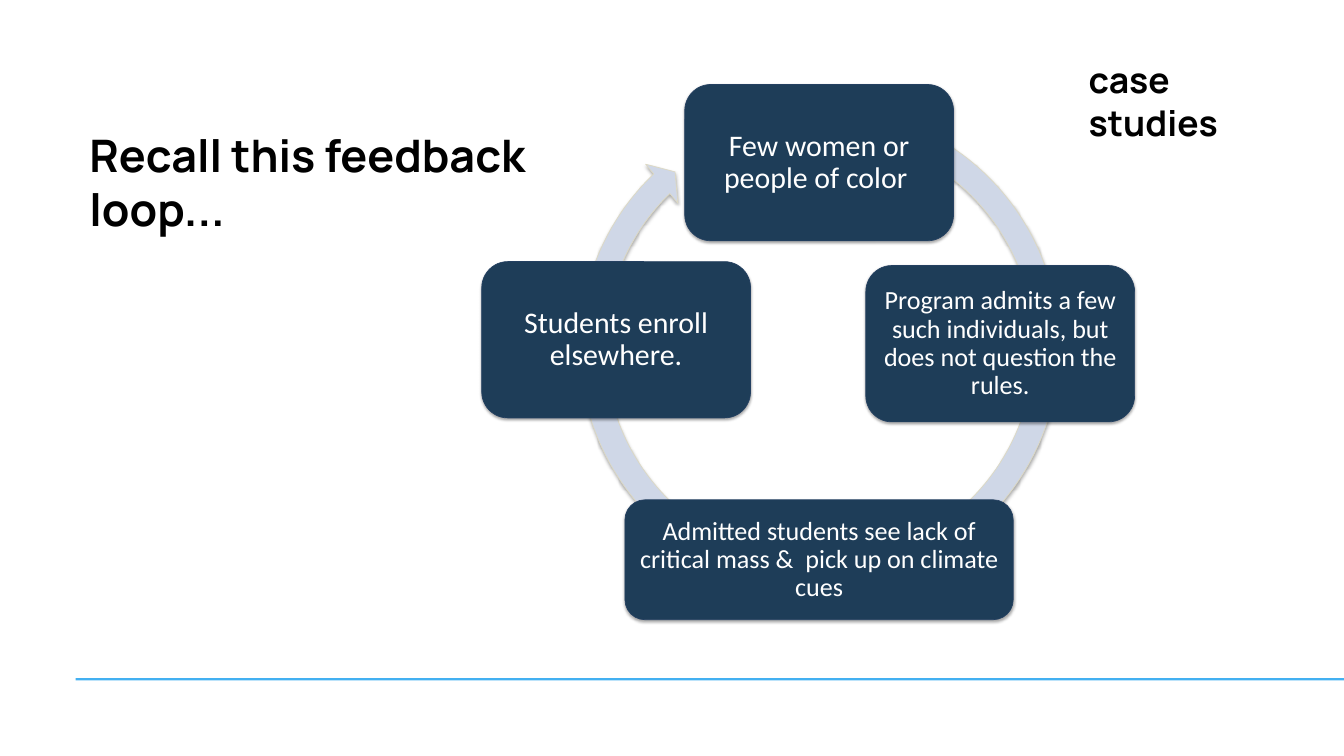
"""Build the feedback loop slide with four boxes on a circular arrow."""
from lxml import etree
from pptx import Presentation
from pptx.dml.color import RGBColor
from pptx.enum.shapes import MSO_SHAPE
from pptx.enum.text import MSO_ANCHOR, MSO_AUTO_SIZE, PP_ALIGN
from pptx.util import Pt

RECT, ROUND = MSO_SHAPE.RECTANGLE, MSO_SHAPE.ROUNDED_RECTANGLE
RING = MSO_SHAPE.CIRCULAR_ARROW
TOP, MIDDLE = MSO_ANCHOR.TOP, MSO_ANCHOR.MIDDLE
LEFT, CENTER = PP_ALIGN.LEFT, PP_ALIGN.CENTER
NO_FIT = MSO_AUTO_SIZE.NONE
DEGREE = 0.6
SHADOW = (
    '<a:outerShdw xmlns:a="http://schemas.openxmlformats.org/drawingml/2006/main" '
    'blurRad="39370" dist="22860" dir="5400000" rotWithShape="0">'
    '<a:srgbClr val="000000"><a:alpha val="35000"/></a:srgbClr></a:outerShdw>'
)


def paint(sp, fill, line):
    """Give a shape its fill, outline and soft shadow."""
    sp.fill.solid()
    sp.fill.fore_color.rgb = RGBColor.from_string(fill)
    sp.line.color.rgb = RGBColor.from_string(line)
    sp.line.width = Pt(0.75)
    sp.shadow.inherit = False
    effects = sp._element.spPr.find("{*}effectLst")
    effects.append(etree.fromstring(SHADOW))


def write(sp, text, size, font, color, bold, align, anchor, inset):
    """Set the text of a shape in one style."""
    tf = sp.text_frame
    frame = dict(word_wrap=True, auto_size=NO_FIT, vertical_anchor=anchor,
                 margin_left=Pt(inset[0]), margin_right=Pt(inset[0]),
                 margin_top=Pt(inset[1]), margin_bottom=Pt(inset[1]))
    for name, value in frame.items():
        setattr(tf, name, value)
    p = tf.paragraphs[0]
    p.alignment = align
    r = p.add_run()
    r.text = text
    for name, value in dict(size=Pt(size), name=font, bold=bold).items():
        setattr(r.font, name, value)
    r.font.color.rgb = RGBColor.from_string(color)
    return p


prs = Presentation()
prs.slide_width, prs.slide_height = Pt(1440), Pt(810)
s = prs.slides.add_slide(prs.slide_layouts[5])

title = s.shapes.title
place = dict(left=95.76, top=136.8, width=529.2, height=116.64)
for name, value in place.items():
    setattr(title, name, Pt(value))
write(title, "Recall this feedback loop...", 48, "Manrope", "000000", True,
      LEFT, TOP, (0, 0))

rule = s.shapes.add_shape(RECT, Pt(80.9), Pt(726.5), Pt(1406), Pt(2.6))
rule.fill.solid()
rule.fill.fore_color.rgb = RGBColor.from_string("43B0F1")
rule.line.fill.background()
rule.shadow.inherit = False

label = s.shapes.add_textbox(Pt(1159.4), Pt(59), Pt(227.5), Pt(53.3))
write(label, "case studies", 38, "Manrope", "000000", True, LEFT, TOP, (7.2, 3.6))

ring = s.shapes.add_shape(RING, Pt(607.7), Pt(101.5), Pt(540.7), Pt(540.7))
shape_values = [0.05, 4.5 * DEGREE, 226 * DEGREE, 292.5 * DEGREE, 0.05]
for i, value in enumerate(shape_values):
    ring.adjustments[i] = value
paint(ring, "CFD7E7", "DDD9C3")

boxes = [
    ("Few women or people of color ", 733.7, 90.5, 288, 167.5, 32),
    ("Program admits a few such individuals, but does not question the rules.",
     927.7, 284.5, 288, 167.5, 28),
    ("Admitted students see lack of critical mass &  pick up on climate cues",
     669.6, 535.5, 416, 128.5, 28),
    ("Students enroll elsewhere.", 516.2, 280.3, 288, 167.5, 32),
]
for text, x, y, w, h, size in boxes:
    sp = s.shapes.add_shape(ROUND, Pt(x), Pt(y), Pt(w), Pt(h))
    sp.adjustments[0] = 0.167
    paint(sp, "1E3D58", "244061")
    p = write(sp, text, size, "Calibri", "FFFFFF", False, CENTER, MIDDLE, (8.5, 8.5))
    p.line_spacing = 0.9

prs.save("out.pptx")
